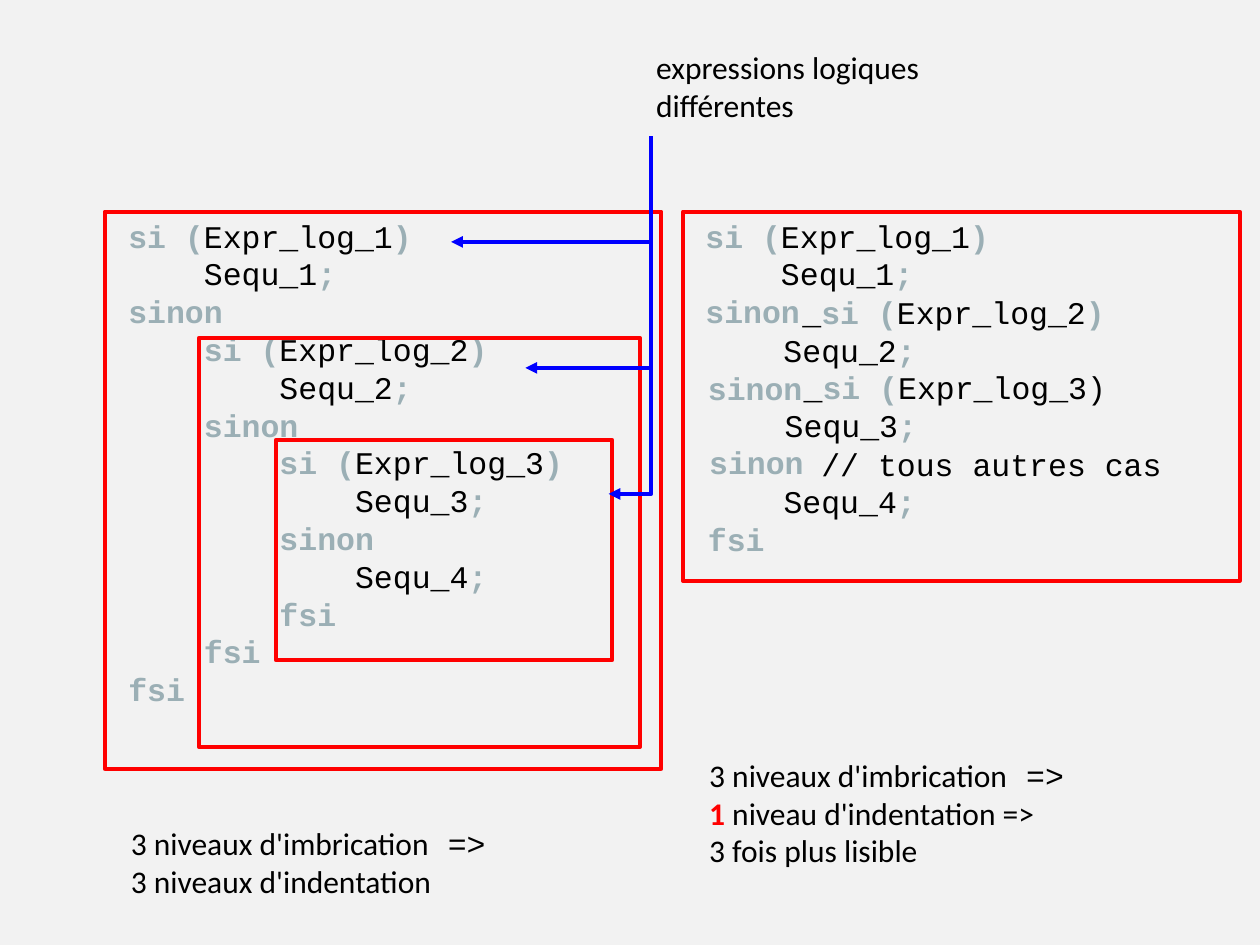
from lxml.etree import SubElement
from pptx import Presentation
from pptx.dml.color import RGBColor as Color
from pptx.enum.shapes import MSO_CONNECTOR as Connector, MSO_SHAPE as Shape
from pptx.oxml.ns import qn
from pptx.util import Inches, Pt

COLORS = {
    "page": "F2F2F2",
    "text": "000000",
    "keyword": "9BAFB5",
    "frame": "FF0000",
    "arrow": "0000FF",
}
CODE_FONT = "Courier New"
NOTE_FONT = "Calibri"
CHARACTER = 0.15
TAB = 4
LINE_HEIGHT = 0.3
SPINE = 5.17

PLAIN = dict(font=CODE_FONT)
KEYWORD = dict(font=CODE_FONT, color="keyword", bold=True)
NOTE = dict(font=NOTE_FONT)
STRONG = dict(font=NOTE_FONT, color="frame", bold=True)

NESTED = [
    (0, "|si (|Expr_log_1|)"),
    (TAB, "Sequ_1|;"),
    (0, "|sinon"),
    (TAB, "|si (|Expr_log_2|)"),
    (2 * TAB, "Sequ_2|;"),
    (TAB, "|sinon"),
    (2 * TAB, "|si (|Expr_log_3|)"),
    (3 * TAB, "Sequ_3|;"),
    (2 * TAB, "|sinon"),
    (3 * TAB, "Sequ_4|;"),
    (2 * TAB, "|fsi"),
    (TAB, "|fsi"),
    (0, "|fsi"),
]
CHAINED = [
    (5.52, 2.28, 3.35, [(5, "_|si (|Expr_log_2|)"), (TAB, "Sequ_2|;"), (0, "|sinon")]),
    (5.5, 1.67, 2.45, NESTED[:3]),
    (5.53, 2.87, 3.35, [(5, "_|si (|Expr_log_3)"), (TAB, "Sequ_3|;"), (0, "|sinon")]),
    (5.52, 3.48, 3.8, [(6, "// tous autres cas"), (TAB, "Sequ_4|;"), (0, "|fsi")]),
]
DEPTH = [("3 niveaux d'imbrication", NOTE), (" =>", PLAIN)]
NOTES = [
    (0.94, 6.49, 3.07, [DEPTH, [("3 niveaux d'indentation", NOTE)]]),
    (5.53, 5.95, 3.07, [
        DEPTH,
        [("1", STRONG), (" niveau d'indentation =>", NOTE)],
        [("3 fois plus lisible", NOTE)],
    ]),
    (5.11, 0.33, 2.29, [[("expressions logiques", NOTE)], [("différentes", NOTE)]]),
]
FRAMES = [
    (1.58, 2.68, 3.5, 3.25),
    (0.83, 1.68, 4.42, 4.42),
    (2.19, 3.49, 2.67, 1.75),
    (5.42, 1.68, 4.42, 2.93),
]


def color_of(name):
    return Color.from_string(COLORS[name])


def add_span(para, text, font, color="text", bold=False, size=18):
    span = para.add_run()
    span.text = text
    span.font.name = font
    span.font.size = Pt(size)
    span.font.bold = bold
    span.font.color.rgb = color_of(color)


def add_text(page, left, top, width, lines, indents=None):
    height = LINE_HEIGHT * len(lines) + 0.1
    box = page.shapes.add_textbox(*map(Inches, (left, top, width + 0.05, height)))
    frame = box.text_frame
    frame.word_wrap = True
    for index, spans in enumerate(lines):
        para = frame.add_paragraph() if index else frame.paragraphs[0]
        if indents and indents[index]:
            properties = para._p.get_or_add_pPr()
            properties.set("marL", str(Inches(indents[index] * CHARACTER)))
            properties.set("indent", "0")
        for text, style in spans:
            add_span(para, text, **style)


def add_code(page, left, top, width, rows):
    lines = [
        [(part, KEYWORD if index % 2 else PLAIN)
         for index, part in enumerate(code.split("|")) if part]
        for _, code in rows
    ]
    add_text(page, left, top, width, lines, [indent for indent, _ in rows])


def style_line(shape, color):
    shape.line.color.rgb = color_of(color)
    shape.line.width = Pt(2.25)


def add_arrowhead(shape):
    SubElement(shape.line._get_or_add_ln(), qn("a:tailEnd"), type="triangle")


def add_frame(page, *place):
    frame = page.shapes.add_shape(Shape.RECTANGLE, *map(Inches, place))
    frame.shadow.inherit = False
    frame.fill.background()
    style_line(frame, "frame")


def add_elbow(page, start, *points):
    builder = page.shapes.build_freeform(*map(Inches, start))
    builder.add_line_segments([tuple(map(Inches, point)) for point in points], close=False)
    elbow = builder.convert_to_shape()
    elbow.shadow.inherit = False
    elbow.fill.background()
    style_line(elbow, "arrow")
    add_arrowhead(elbow)


def add_arrow(page, tip, level):
    arrow = page.shapes.add_connector(
        Connector.STRAIGHT, *map(Inches, (SPINE, level, tip, level)))
    style_line(arrow, "arrow")
    add_arrowhead(arrow)
    SubElement(arrow._element.spPr, qn("a:effectLst"))


def main():
    deck = Presentation()
    deck.slide_width, deck.slide_height = Inches(10), Inches(7.5)
    page = deck.slides.add_slide(deck.slide_layouts[6])
    page.background.fill.solid()
    page.background.fill.fore_color.rgb = color_of("page")

    add_code(page, 0.92, 1.67, 3.65, NESTED)
    for block in CHAINED:
        add_code(page, *block)
    for place in FRAMES:
        add_frame(page, *place)
    for note in NOTES:
        add_text(page, *note)
    add_elbow(page, (SPINE, 1.08), (SPINE, 3.92), (4.83, 3.92))
    for tip, level in ((3.58, 1.92), (4.17, 2.92)):
        add_arrow(page, tip, level)
    deck.save("out.pptx")


if __name__ == "__main__":
    main()
